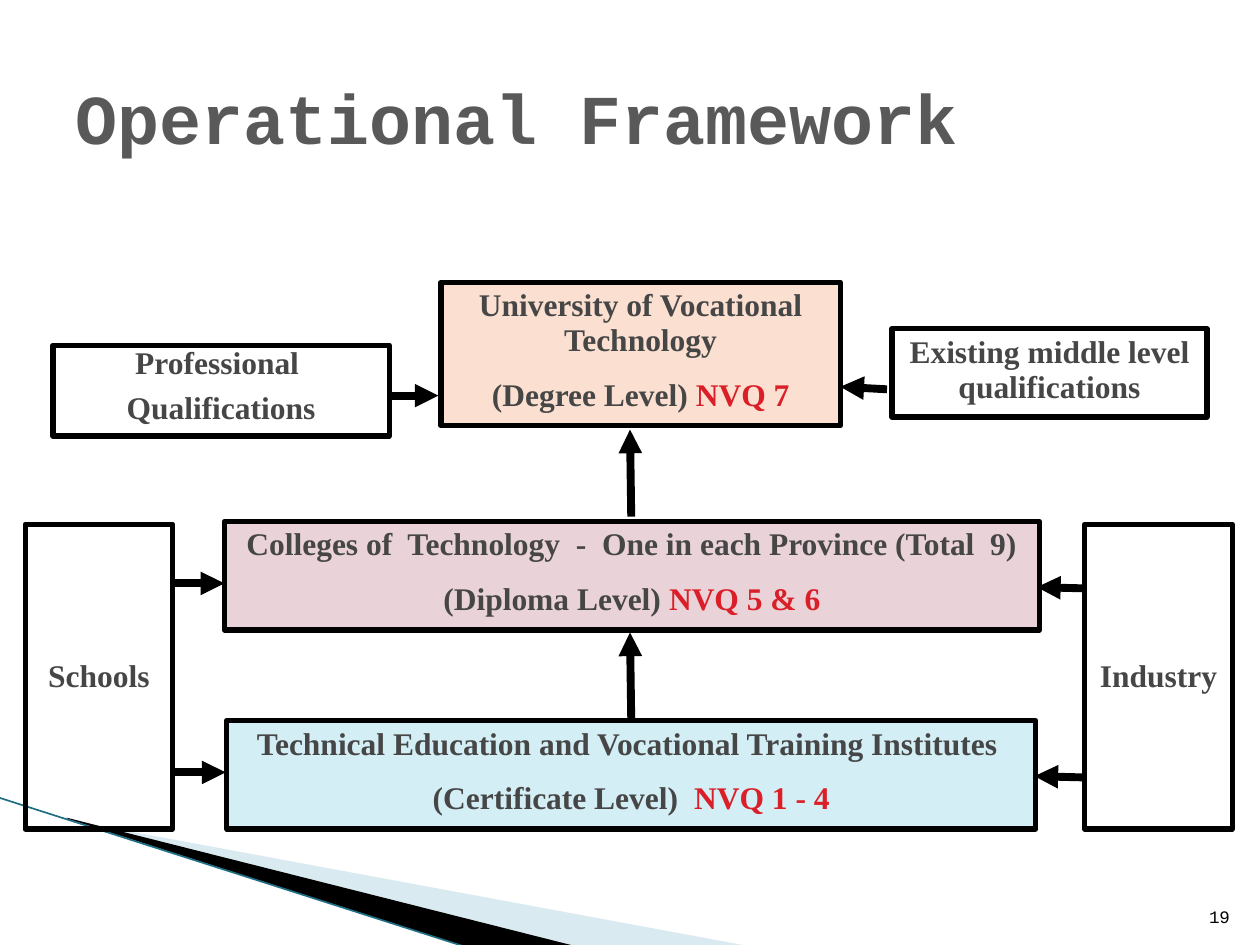
from typing import NamedTuple, Optional

from lxml.etree import SubElement
from pptx import Presentation
from pptx.dml.color import RGBColor
from pptx.enum.shapes import MSO_CONNECTOR, MSO_SHAPE
from pptx.enum.text import MSO_ANCHOR, PP_ALIGN
from pptx.oxml.ns import qn
from pptx.util import Inches, Pt

BLACK = RGBColor(0x00, 0x00, 0x00)
TITLE_GRAY = RGBColor(0x59, 0x59, 0x59)
TEXT_GRAY = RGBColor(0x46, 0x46, 0x46)
RED = RGBColor(0xDA, 0x1F, 0x28)
PEACH = RGBColor(0xFB, 0xE0, 0xD1)
ROSE = RGBColor(0xEA, 0xD3, 0xD8)
ICE = RGBColor(0xD3, 0xEE, 0xF5)
SWOOSH_BLUE = RGBColor(0xA0, 0xCB, 0xDC)
SWOOSH_EDGE = RGBColor(0x1E, 0x6E, 0x84)
MONO, SERIF = "Courier New", "Times New Roman"

# The slide is a grid of 100 columns by 75 rows
WIDTH, HEIGHT = Inches(10), Inches(7.5)
COLUMN, ROW = WIDTH / 100, HEIGHT / 75


class Area(NamedTuple):
    column: float
    row: float
    columns: float
    rows: float

    def lengths(self) -> tuple:
        return (round(self.column * COLUMN), round(self.row * ROW),
                round(self.columns * COLUMN), round(self.rows * ROW))


class Line(NamedTuple):
    text: str
    level: str = ""  # NVQ level, shown in red
    spacing: float = 0.93
    before: float = 11.2


class Stage(NamedTuple):
    area: Area
    lines: list
    fill: Optional[RGBColor] = None
    anchor: MSO_ANCHOR = MSO_ANCHOR.TOP
    side_inset: float = 0.1


class Arrow(NamedTuple):
    start: tuple
    tip: tuple


def side_stage(column: float, name: str) -> Stage:
    return Stage(Area(column, 41.6, 11.7, 24.2), [Line(name)],
                 anchor=MSO_ANCHOR.MIDDLE, side_inset=0.05)


STAGES = [
    Stage(Area(70.8, 26.1, 25, 7), [Line("Existing middle level qualifications")]),
    Stage(Area(35, 22.4, 31.7, 11.4),
          [Line("University of Vocational Technology"),
           Line("(Degree Level) ", "NVQ 7")], PEACH),
    Stage(Area(17.8, 41.4, 64.7, 8.6),
          [Line("Colleges of  Technology  -  One in each Province (Total  9)"),
           Line("(Diploma Level) ", "NVQ 5 & 6")], ROSE),
    Stage(Area(4.2, 27.4, 26.7, 7.2),
          [Line("Professional ", spacing=0.75),
           Line("Qualifications", spacing=0.65)]),
    Stage(Area(18, 57.2, 64.2, 8.6),
          [Line("Technical Education and Vocational Training Institutes "),
           Line("(Certificate Level)  ", "NVQ 1 - 4")], ICE),
    side_stage(2, "Schools"),
    side_stage(86.1, "Industry"),
]

ARROWS = [
    Arrow((50.1, 41), (50, 34.1)),
    Arrow((50.1, 57.1), (50, 50.2)),
    Arrow((30.9, 31.4), (34.8, 31.4)),
    Arrow((70.4, 30.9), (66.7, 30.7)),
    Arrow((13.5, 46.3), (17.8, 46.3)),
    Arrow((13.9, 61.3), (17.9, 61.3)),
    Arrow((86.1, 46.7), (82.3, 46.6)),
    Arrow((85.9, 61.7), (82.1, 61.6)),
]


def add_span(para, text: str, *, font: str, size: float, color: RGBColor,
             bold: bool = False) -> None:
    span = para.add_run()
    span.text = text
    span.font.name, span.font.size = font, Pt(size)
    span.font.bold = bold
    span.font.color.rgb = color


def add_line(slide, start: tuple, end: tuple, color: RGBColor, width: float):
    line = slide.shapes.add_connector(
        MSO_CONNECTOR.STRAIGHT,
        round(start[0] * COLUMN), round(start[1] * ROW),
        round(end[0] * COLUMN), round(end[1] * ROW))
    line.line.color.rgb = color
    line.line.width = Pt(width)
    SubElement(line._element.spPr, qn("a:effectLst"))
    return line


def add_arrow(slide, arrow: Arrow) -> None:
    line = add_line(slide, arrow.start, arrow.tip, BLACK, 4.5)
    SubElement(line.line._get_or_add_ln(), qn("a:tailEnd"), type="triangle")


def add_wedge(slide, points: list, color: RGBColor, opacity: int = 100) -> None:
    corners = [(column * COLUMN, row * ROW) for column, row in points]
    builder = slide.shapes.build_freeform(*corners[0])
    builder.add_line_segments(corners[1:])
    wedge = builder.convert_to_shape()
    wedge.shadow.inherit = False
    wedge.line.fill.background()
    wedge.fill.solid()
    wedge.fill.fore_color.rgb = color
    if opacity < 100:
        tone = wedge._element.spPr.find(qn("a:solidFill"))[0]
        SubElement(tone, qn("a:alpha"), val=str(opacity * 1000))


def add_stage(slide, stage: Stage) -> None:
    box = slide.shapes.add_shape(MSO_SHAPE.RECTANGLE, *stage.area.lengths())
    box.shadow.inherit = False
    box.line.color.rgb = BLACK
    box.line.width = Pt(3)
    if stage.fill is None:
        box.fill.background()
    else:
        box.fill.solid()
        box.fill.fore_color.rgb = stage.fill
    frame = box.text_frame
    frame.word_wrap = True
    frame.vertical_anchor = stage.anchor
    frame.margin_left = frame.margin_right = Inches(stage.side_inset)
    for index, line in enumerate(stage.lines):
        para = frame.add_paragraph() if index else frame.paragraphs[0]
        para.alignment = PP_ALIGN.CENTER
        para.line_spacing = line.spacing
        para.space_before = Pt(line.before if index else 0)
        add_span(para, line.text, font=SERIF, size=18, color=TEXT_GRAY, bold=True)
        if line.level:
            add_span(para, line.level, font=SERIF, size=18, color=RED, bold=True)


def place_text(box, area: Area, anchor: MSO_ANCHOR, alignment: PP_ALIGN,
               text: str, **style) -> None:
    box.left, box.top, box.width, box.height = area.lengths()
    frame = box.text_frame
    frame.word_wrap = True
    frame.vertical_anchor = anchor
    frame.paragraphs[0].alignment = alignment
    add_span(frame.paragraphs[0], text, **style)


def main() -> None:
    deck = Presentation()
    deck.slide_width, deck.slide_height = WIDTH, HEIGHT
    slide = deck.slides.add_slide(deck.slide_layouts[5])

    # Corner swoosh
    add_wedge(slide, [(5.5, 65.1), (59.5, 75.1), (45.6, 75.1), (5.5, 65)],
              SWOOSH_BLUE, opacity=40)
    add_wedge(slide, [(5.3, 64.9), (45.7, 75.1), (37.2, 75.2), (5.4, 65)], BLACK)
    add_line(slide, (-0.1, 63.3), (37.1, 75.2), SWOOSH_EDGE, 0.95)

    # Title
    place_text(slide.shapes.title, Area(5, 3, 90, 12.5), MSO_ANCHOR.MIDDLE,
               PP_ALIGN.LEFT, "Operational Framework",
               font=MONO, size=40, color=TITLE_GRAY, bold=True)

    # Framework
    for stage in STAGES:
        add_stage(slide, stage)
    for arrow in ARROWS:
        add_arrow(slide, arrow)

    # Page number
    page_area = Area(94.6, 70.1, 4, 4)
    place_text(slide.shapes.add_textbox(*page_area.lengths()), page_area,
               MSO_ANCHOR.BOTTOM, PP_ALIGN.RIGHT, "19",
               font=MONO, size=10, color=BLACK)

    deck.save("out.pptx")


if __name__ == "__main__":
    main()
